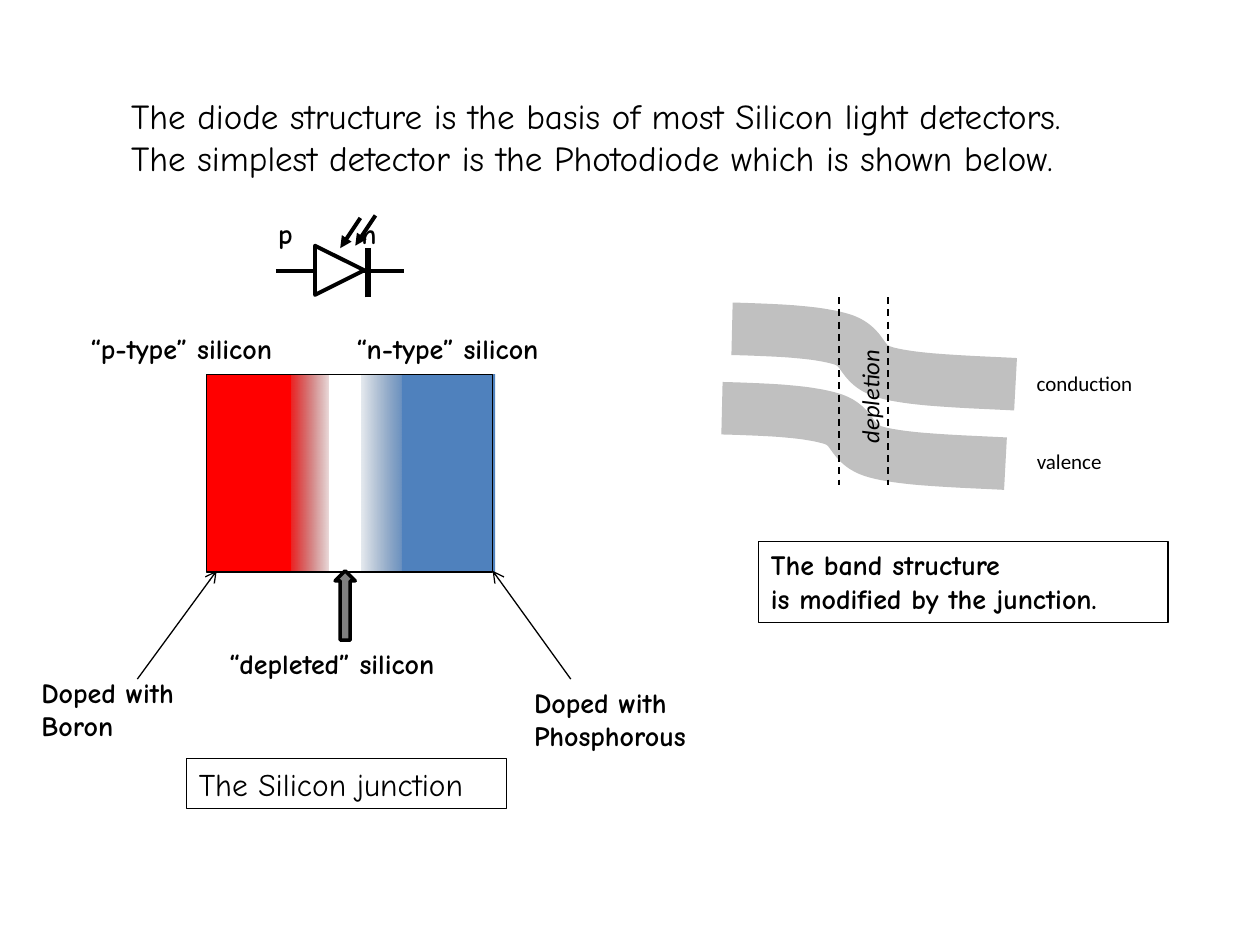
from dataclasses import dataclass

from lxml import etree
from pptx import Presentation, util as u
from pptx.dml.color import RGBColor
from pptx.enum import dml, shapes, text
from pptx.oxml.ns import qn

PX = 9144  # EMU per px, 100 px to the inch


@dataclass(frozen=True)
class Theme:
    ink: str = "000000"
    paper: str = "FFFFFF"
    p_side: str = "FF0000"
    p_fade: str = "760000"
    n_side: str = "4F81BD"
    n_fade: str = "395C87"
    band: str = "C0C0C0"
    arrow: str = "808080"
    hand: str = "Comic Neue"
    plain: str = "Calibri"
    title: int = 20
    caption: int = 18
    label: int = 16
    region: int = 14
    small: int = 12


theme = Theme()
prs = Presentation()
prs.slide_width, prs.slide_height = 1000 * PX, 750 * PX
slide = prs.slides.add_slide(prs.slide_layouts[5])


def write(words, x, y, w, h, size=theme.label, font=theme.hand, bold=False,
          italic=False, turn=0, frame=False, box=None):
    """Write text in a new box, or in the placeholder passed as box."""
    wrap = box is not None
    box = box or slide.shapes.add_textbox(0, 0, 0, 0)
    box.left, box.top, box.width, box.height = (v * PX for v in (x, y, w, h))
    box.rotation = turn
    if frame:
        box.line.color.rgb = RGBColor.from_string(theme.ink)
        box.line.width = u.Pt(0.75)
    body = box.text_frame
    body.text = words
    body.word_wrap = wrap
    body.auto_size = text.MSO_AUTO_SIZE.SHAPE_TO_FIT_TEXT
    body.vertical_anchor = text.MSO_ANCHOR.TOP
    for paragraph in body.paragraphs:
        paragraph.alignment = text.PP_ALIGN.LEFT
        style = paragraph.runs[0].font
        style.name, style.size = font, u.Pt(size)
        style.bold, style.italic = bold, italic
        style.color.rgb = RGBColor.from_string(theme.ink)


def draw_line(x1, y1, x2, y2, width, tip=None, dashed=False):
    """Draw a straight line, with an arrowhead of kind tip at its end."""
    line = slide.shapes.add_connector(
        shapes.MSO_CONNECTOR.STRAIGHT, x1 * PX, y1 * PX, x2 * PX, y2 * PX)
    line.line.color.rgb = RGBColor.from_string(theme.ink)
    line.line.width = u.Pt(width)
    if dashed:
        line.line.dash_style = dml.MSO_LINE.DASH
    if tip:
        etree.SubElement(line.line._get_or_add_ln(), qn("a:tailEnd"), type=tip)
    etree.SubElement(line._element.spPr, qn("a:effectLst"))


# Heading
write("The diode structure is the basis of most Silicon light detectors.\n"
      "The simplest detector is the Photodiode which is shown below.",
      94, 70, 906, 77, size=theme.title, box=slide.shapes.title)

# Wire of the photodiode symbol, behind its triangle
draw_line(219, 215, 321, 215, 2.25)

# Filled shapes: a pair of colours with opacities makes a left-to-right fade
kinds = shapes.MSO_SHAPE
n_fade = ((theme.n_fade, 13), (theme.n_side, 100))
p_fade = ((theme.p_side, 100), (theme.p_fade, 14))
for kind, x, y, w, h, fill, outline, turn in (
        (kinds.ISOSCELES_TRIANGLE, 250, 195, 39, 39, theme.paper, 2.25, 90),
        (kinds.RECTANGLE, 287, 297, 40, 157, n_fade, 0, 0),
        (kinds.RECTANGLE, 226, 297, 35, 157, p_fade, 0, 0),
        (kinds.RECTANGLE, 319, 297, 74, 157, theme.n_side, 0, 0),
        (kinds.RECTANGLE, 164, 297, 67, 157, theme.p_side, 0, 0),
        (kinds.RECTANGLE, 164, 297, 227, 157, None, 0.75, 0),
        (kinds.UP_ARROW, 266, 453, 16, 55, theme.arrow, 2, 0)):
    part = slide.shapes.add_shape(kind, x * PX, y * PX, w * PX, h * PX)
    part.shadow.inherit = False
    part.rotation = turn
    if fill is None:
        part.fill.background()
    elif isinstance(fill, str):
        part.fill.solid()
        part.fill.fore_color.rgb = RGBColor.from_string(fill)
    else:
        part.fill.gradient()
        part.fill.gradient_angle = 0
        for stop, (colour, opacity) in zip(part.fill.gradient_stops, fill):
            stop.color.rgb = RGBColor.from_string(colour)
        for mark, (colour, opacity) in zip(
                part._element.spPr.iter(qn("a:srgbClr")), fill):
            etree.SubElement(mark, qn("a:alpha"), val=str(opacity * 1000))
    if outline:
        part.line.color.rgb = RGBColor.from_string(theme.ink)
        part.line.width = u.Pt(outline)
    else:
        part.line.fill.background()

# Cathode bar and incoming light
draw_line(292, 236, 292, 197, 3)
for x, y in ((282, 195), (270, 197)):
    draw_line(x + 16, y - 24, x, y, 2.25, tip="triangle")

# Energy bands: one curve of three cubic pieces, drawn at two heights
curve = ((0, 0), (33, 1), (65, 2), (86, 8), (107, 14), (100, 29),
         (123, 35), (146, 41), (186, 42), (225, 44))
STEPS = 20
trail = []
for first in (0, 3, 6):
    a, b, c, d = curve[first:first + 4]
    for step in range(1, STEPS + 1):
        t = step / STEPS
        s = 1 - t
        trail.append([s**3 * a[i] + 3 * s * s * t * b[i]
                      + 3 * s * t * t * c[i] + t**3 * d[i] for i in (0, 1)])
for x, y in ((573, 324), (581, 261)):  # valence, conduction
    builder = slide.shapes.build_freeform(x * PX, y * PX)
    builder.add_line_segments(
        [(round((x + dx) * PX), round((y + dy) * PX)) for dx, dy in trail],
        close=False)
    band = builder.convert_to_shape()
    band.shadow.inherit = False
    band.fill.background()
    band.line.color.rgb = RGBColor.from_string(theme.band)
    band.line.width = u.Pt(30)

# Edges of the depletion region
for x in (666, 705):
    draw_line(x, 236, x, 385, 1, dashed=True)

# Pointers to the doped sides
draw_line(109, 539, 172, 453, 0.75, tip="arrow")
draw_line(453, 539, 391, 453, 0.75, tip="arrow")

# Junction labels
for words, x, y, w, h in (
        ("p", 211, 167, 32, 37),
        ("n", 277, 167, 32, 37),
        ("“p-type” silicon", 62, 258, 187, 37),
        ("“n-type” silicon", 273, 258, 187, 37),
        ("“depleted” silicon", 172, 508, 207, 37),
        ("Doped with\nPhosphorous", 414, 539, 150, 64),
        ("Doped with\nBoron", 23, 531, 141, 64)):
    write(words, x, y, w, h, bold=True)

# Band labels
write("depletion", 643, 298, 94, 33, size=theme.region, font=theme.plain,
      italic=True, turn=270)
write("valence", 813, 351, 72, 30, size=theme.small, font=theme.plain)
write("conduction", 813, 289, 96, 30, size=theme.small, font=theme.plain)

# Framed captions
write("The Silicon junction", 148, 602, 254, 40, size=theme.caption, frame=True)
write("The band structure\nis modified by the junction.", 602, 430, 325, 64,
      bold=True, frame=True)

prs.save("out.pptx")
